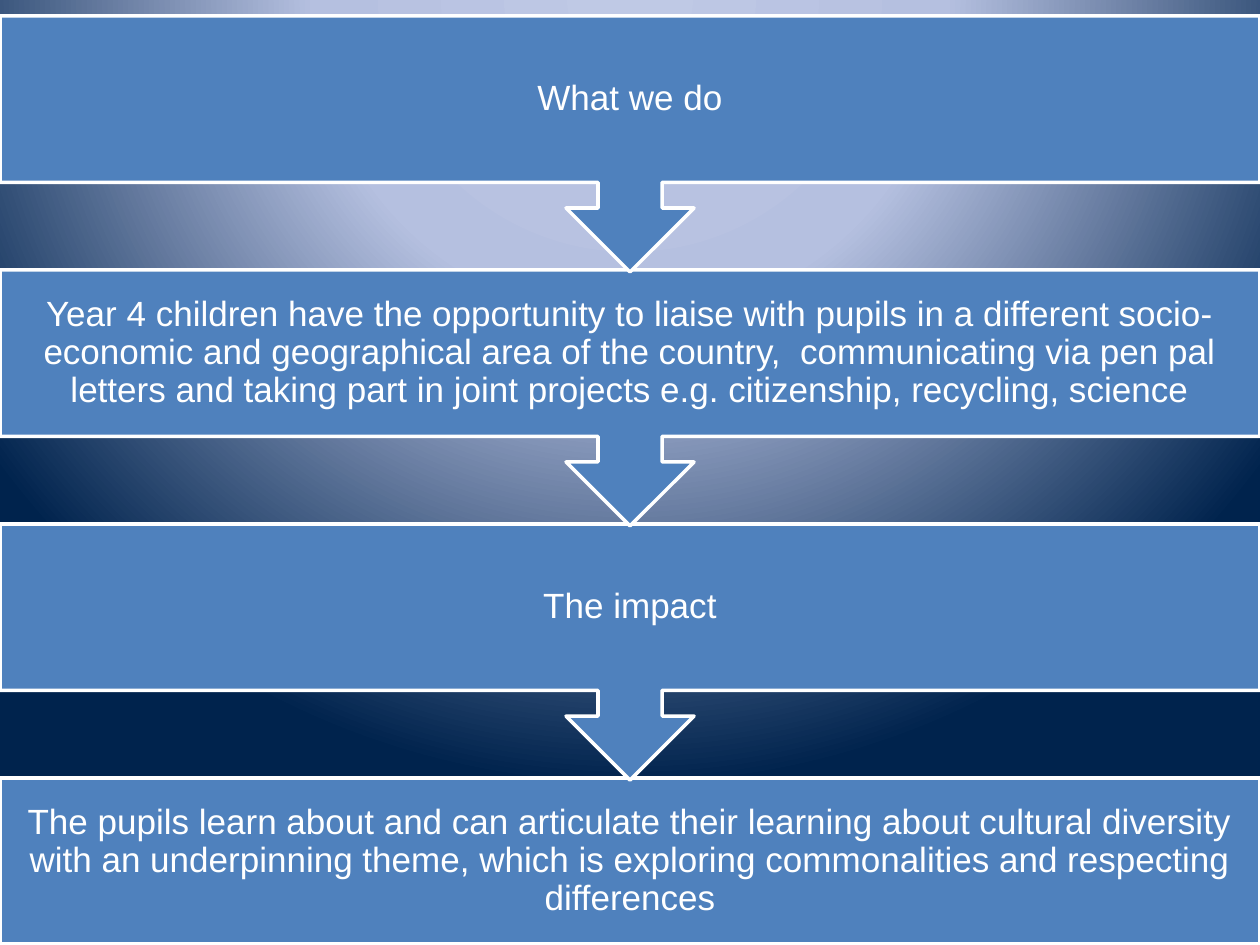
from dataclasses import dataclass

from pptx import Presentation
from pptx.dml.color import RGBColor as Rgb
from pptx.enum.shapes import MSO_SHAPE as Shape
from pptx.enum.text import MSO_ANCHOR as Anchor, PP_ALIGN as Align
from pptx.oxml import parse_xml
from pptx.oxml.ns import nsdecls
from pptx.util import Emu, Pt

EMU_PER_PX = 914400 / 126
SLIDE_W, SLIDE_H = 1260, 945
FIRST_TOP, STEP_PITCH = 16, 254
PANEL_H, CALLOUT_H = 166, 256
INSET = 20

STEPS = [
    "What we do",
    "Year 4 children have the opportunity to liaise with pupils in a different "
    "socio-economic and geographical area of the country,  communicating via pen pal "
    "letters and taking part in joint projects e.g. citizenship, recycling, science",
    "The impact",
    "The pupils learn about and can articulate their learning about cultural diversity "
    "with an underpinning theme, which is exploring commonalities and respecting differences",
]


@dataclass(frozen=True)
class Theme:
    """Colours and type sizes of the slide."""
    panel: str = "4F81BD"
    ink: str = "FFFFFF"
    glow: tuple = ((0, "BFC9E5"), (40, "B5C0E0"), (100, "00234D"))
    font: str = "Arial"
    size: int = 20
    outline: int = 2


THEME = Theme()


def px(length):
    """Turn a length in px into EMU."""
    return Emu(round(length * EMU_PER_PX))


def set_all(target, values):
    """Set each named attribute on the target."""
    for name, value in values.items():
        setattr(target, name, value)


def paint_background(slide):
    """Fill the slide with a glow centred above its top edge."""
    stops = "".join(
        f'<a:gs pos="{share * 1000}"><a:srgbClr val="{colour}"/></a:gs>'
        for share, colour in THEME.glow
    )
    glow = parse_xml(
        f'<a:gradFill {nsdecls("a")} rotWithShape="1"><a:gsLst>{stops}</a:gsLst>'
        '<a:path path="circle"><a:fillToRect l="50000" t="-80000" r="50000" b="180000"/>'
        "</a:path></a:gradFill>"
    )
    slide.background.fill.background()
    properties = slide._element.cSld.bg.bgPr
    properties.replace(properties[0], glow)


def add_panel(shapes, kind, left, top, width, height, rotation):
    """Place the outlined backing of one step."""
    panel = shapes.add_shape(kind, px(left), px(top), px(width), px(height))
    panel.rotation = rotation
    panel.shadow.inherit = False
    panel.fill.solid()
    panel.fill.fore_color.rgb = Rgb.from_string(THEME.panel)
    panel.line.color.rgb = Rgb.from_string(THEME.ink)
    panel.line.width = Pt(THEME.outline)


def add_wording(shapes, wording, left, top, width, height):
    """Place the centred wording of one step."""
    frame = shapes.add_textbox(px(left), px(top), px(width), px(height)).text_frame
    margins = {f"margin_{side}": px(INSET) for side in ("left", "top", "right", "bottom")}
    set_all(frame, {"word_wrap": True, "vertical_anchor": Anchor.MIDDLE, **margins})
    paragraph = frame.paragraphs[0]
    set_all(paragraph, {"alignment": Align.CENTER, "line_spacing": 0.9})
    run = paragraph.add_run()
    run.text = wording
    set_all(run.font, {"name": THEME.font, "size": Pt(THEME.size)})
    run.font.color.rgb = Rgb.from_string(THEME.ink)


def add_process(slide, left, top, width):
    """Stack the steps from last to first, each but the last pointing down."""
    shapes = slide.shapes.add_group_shape().shapes
    last = len(STEPS) - 1
    for index, wording in reversed(list(enumerate(STEPS))):
        step_top = top + index * STEP_PITCH
        if index == last:
            add_panel(shapes, Shape.RECTANGLE, left, step_top, width, PANEL_H, 0)
        else:
            add_panel(shapes, Shape.UP_ARROW_CALLOUT, left, step_top, width, CALLOUT_H, 180)
        add_wording(shapes, wording, left, step_top, width, PANEL_H)


def main():
    """Build the slide and save it."""
    deck = Presentation()
    set_all(deck, {"slide_width": px(SLIDE_W), "slide_height": px(SLIDE_H)})
    slide = deck.slides.add_slide(deck.slide_layouts[6])
    paint_background(slide)
    add_process(slide, 0, FIRST_TOP, SLIDE_W)
    deck.save("out.pptx")


if __name__ == "__main__":
    main()
